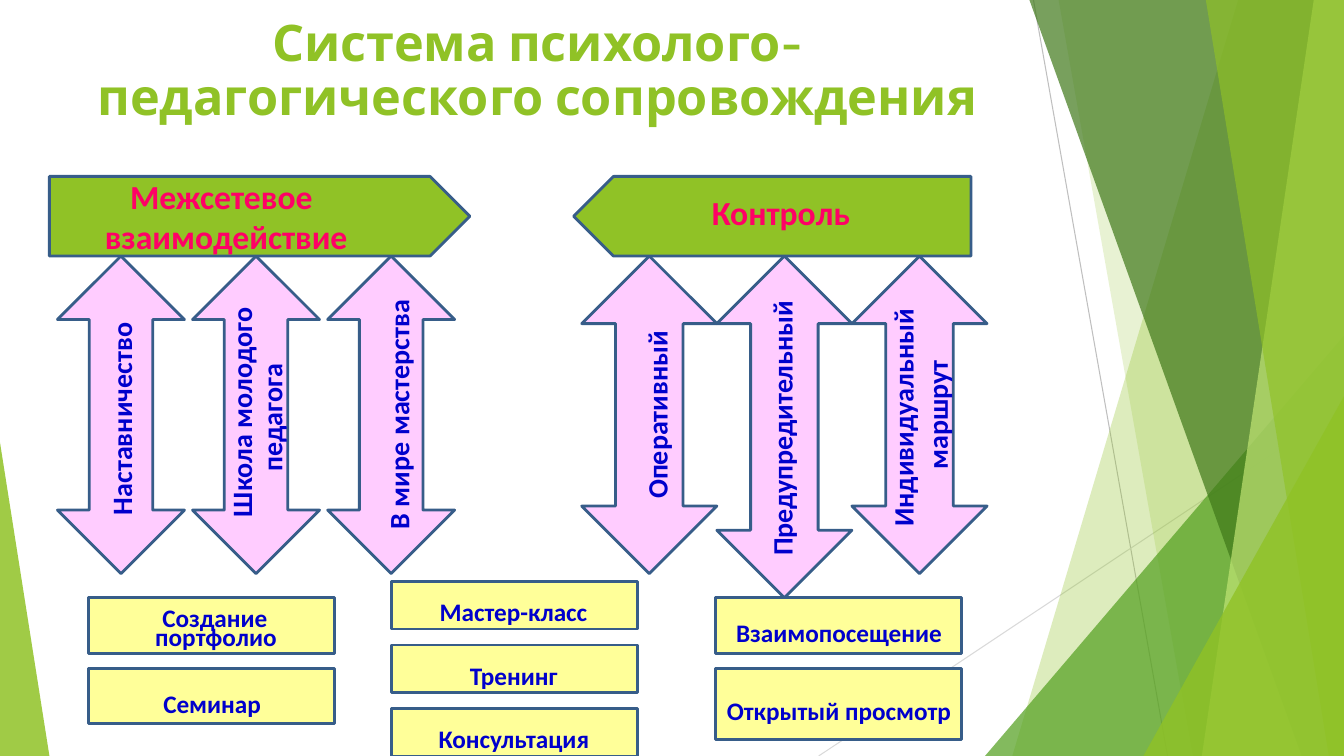
from lxml import etree
from pptx import Presentation
from pptx.dml.color import RGBColor
from pptx.enum.shapes import MSO_CONNECTOR, MSO_SHAPE
from pptx.enum.text import MSO_ANCHOR, PP_ALIGN
from pptx.oxml.ns import qn
from pptx.util import Inches, Pt

STRAIGHT = MSO_CONNECTOR.STRAIGHT
TRIANGLE, RECTANGLE = MSO_SHAPE.ISOSCELES_TRIANGLE, MSO_SHAPE.RECTANGLE
PENTAGON, DOUBLE_ARROW = MSO_SHAPE.PENTAGON, MSO_SHAPE.UP_DOWN_ARROW
TOP, LEFT, CENTER = MSO_ANCHOR.TOP, PP_ALIGN.LEFT, PP_ALIGN.CENTER

LIME = RGBColor(0x90, 0xC2, 0x26)
GREEN = RGBColor(0x54, 0xA0, 0x21)
DARK_GREEN = RGBColor(0x3F, 0x78, 0x19)
PALE_LIME = RGBColor(0xC0, 0xE4, 0x74)
GRAY = RGBColor(0xBF, 0xBF, 0xBF)
LIGHT_GRAY = RGBColor(0xD9, 0xD9, 0xD9)
OUTLINE = RGBColor(0x37, 0x5D, 0x89)
PINK = RGBColor(0xFF, 0xCC, 0xFF)
YELLOW = RGBColor(0xFF, 0xFF, 0x99)
CRIMSON = RGBColor(0xFF, 0x00, 0x66)
BLUE = RGBColor(0x00, 0x00, 0xCC)

WIDTH, HEIGHT = 13.33, 7.5


def set_fill(shape, color, opacity=100):
    shape.shadow.inherit = False
    shape.fill.solid()
    shape.fill.fore_color.rgb = color
    shape.line.fill.background()
    if opacity < 100:
        color_element = shape.fill._xPr.find(".//" + qn("a:srgbClr"))
        etree.SubElement(color_element, qn("a:alpha")).set("val", str(opacity * 1000))


def add_outlined(slide, kind, box, color):
    shape = slide.shapes.add_shape(kind, *map(Inches, box))
    set_fill(shape, color)
    shape.line.color.rgb = OUTLINE
    shape.line.width = Pt(2)
    return shape


def add_text(slide, text, box, size, color, font="Calibri", spacing=1.07,
             alignment=LEFT, margins=(0, 0)):
    text_box = slide.shapes.add_textbox(*map(Inches, box))
    frame = text_box.text_frame
    frame.word_wrap = True
    frame.vertical_anchor = TOP
    frame.margin_left = frame.margin_right = Inches(margins[0])
    frame.margin_top = frame.margin_bottom = Inches(margins[1])
    paragraph = frame.paragraphs[0]
    paragraph.text = text
    paragraph.alignment = alignment
    paragraph.line_spacing = spacing
    paragraph.font.name = font
    paragraph.font.size = Pt(size)
    paragraph.font.bold = True
    paragraph.font.color.rgb = color
    return text_box


def add_ray(slide, start, end, color):
    line = slide.shapes.add_connector(STRAIGHT, *map(Inches, start + end))
    line.line.color.rgb = color
    line.line.width = Pt(0.75)
    etree.SubElement(line._element.spPr, qn("a:effectLst"))


def add_band(slide, top_x, bottom_x, color, opacity):
    """Full-height band from a slanted left edge to the right slide edge."""
    builder = slide.shapes.build_freeform(Inches(top_x), 0)
    corners = [(WIDTH, 0), (WIDTH, HEIGHT), (bottom_x, HEIGHT)]
    builder.add_line_segments([(Inches(x), Inches(y)) for x, y in corners], close=True)
    set_fill(builder.convert_to_shape(), color, opacity)


def add_corner(slide, left, top, width, apex, color, opacity):
    """Right triangle standing on the bottom slide edge."""
    box = (left, top, width, HEIGHT - top)
    shape = slide.shapes.add_shape(TRIANGLE, *map(Inches, box))
    shape.adjustments[0] = apex
    set_fill(shape, color, opacity)


def add_backdrop(slide):
    add_ray(slide, (10.25, 0), (11.58, HEIGHT), GRAY)
    add_ray(slide, (WIDTH, 4.03), (8.12, HEIGHT), LIGHT_GRAY)
    add_band(slide, 12.28, 10.04, LIME, 30)
    add_band(slide, 10.5, 11.83, LIME, 20)
    add_corner(slide, 9.77, 3.33, 3.56, 1, GREEN, 72)
    add_band(slide, 10.21, 12.91, DARK_GREEN, 70)
    add_band(slide, 13.03, 11.92, PALE_LIME, 70)
    add_band(slide, 11.96, 13.18, LIME, 65)
    add_corner(slide, 11.34, 3.93, 1.99, 1, LIME, 80)
    add_corner(slide, 0, 4.39, 0.49, 0, LIME, 85)


def add_banner(slide, box, rotation, labels):
    """Pointed banner; labels are (text, x offset, y offset, width)."""
    left, top = box[:2]
    add_outlined(slide, PENTAGON, box, LIME).rotation = rotation
    for text, dx, dy, width in labels:
        add_text(slide, text, (left + dx, top + dy, width, 0.45), 24, CRIMSON)


def add_arrows(slide, left, top, width, pitch, arrows):
    """Row of arrows; labels are (text, x from axis, middle y, length)."""
    for index, (height, labels) in enumerate(arrows):
        arrow_left = left + index * pitch
        add_outlined(slide, DOUBLE_ARROW, (arrow_left, top, width, height), PINK)
        for text, dx, middle, length in labels:
            center_x = arrow_left + width / 2 + dx
            box = (center_x - length / 2, top + middle - 0.19, length, 0.38)
            add_text(slide, text, box, 20, BLUE).rotation = 270


def add_cards(slide, left, top, pitch, cards):
    """Column of cards; labels are (text, x offset, y offset, width)."""
    for index, (height, labels) in enumerate(cards):
        card_top = top + index * pitch
        add_outlined(slide, RECTANGLE, (left, card_top, 2.44, height), YELLOW)
        for text, dx, dy, width in labels:
            add_text(slide, text, (left + dx, card_top + dy, width, 0.34), 18, BLUE)


def main():
    presentation = Presentation()
    presentation.slide_width = Inches(WIDTH)
    presentation.slide_height = Inches(HEIGHT)
    slide = presentation.slides.add_slide(presentation.slide_layouts[6])

    add_backdrop(slide)
    add_text(slide, "Система психолого-педагогического сопровождения",
             (0.63, 0.13, 9.4, 1.44), 36, LIME, "Cabin", 0.9, CENTER, (0.1, 0.05))

    # Banners
    add_banner(slide, (0.49, 1.75, 4.17, 0.79), 0, [
        ("Межсетевое", 0.8, -0.03, 2.51), ("взаимодействие", 0.55, 0.36, 3.19)])
    add_banner(slide, (5.69, 1.75, 3.94, 0.79), 180, [("Контроль", 1.37, 0.13, 1.82)])

    # Arrows under each banner
    add_arrows(slide, 0.57, 2.54, 1.26, 1.34, [
        (3.15, [("Наставничество", 0, 1.3, 2.54)]),
        (3.15, [("Школа молодого", -0.15, 1.18, 2.82), ("педагога", 0.15, 1.43, 1.41)]),
        (3.15, [("В мире мастерства", 0.07, 1.2, 3.02)])])
    add_arrows(slide, 5.77, 2.54, 1.34, 1.34, [
        (3.15, [("Оперативный", 0.07, 1.3, 2.22)]),
        (3.39, [("Предупредительный", -0.03, 1.29, 3.37)]),
        (3.15, [("Индивидуальный", -0.17, 1.21, 2.95), ("маршрут", 0.17, 1.4, 1.44)])])

    # Columns of cards
    add_cards(slide, 0.88, 5.93, 0.7, [
        (0.55, [("Создание", 0.73, 0.02, 1.46), ("портфолио", 0.66, 0.21, 1.6)]),
        (0.55, [("Семинар", 0.74, 0.18, 1.37)])])
    add_cards(slide, 3.88, 5.77, 0.63, [
        (0.47, [("Мастер-класс", 0.48, 0.13, 1.66)]),
        (0.47, [("Тренинг", 0.78, 0.13, 1.24)]),
        (0.47, [("Консультация", 0.47, 0.13, 2.06)])])
    add_cards(slide, 7.1, 5.93, 0.7, [
        (0.55, [("Взаимопосещение", 0.2, 0.17, 2.72)]),
        (0.71, [("Открытый просмотр", 0.11, 0.25, 2.96)])])

    presentation.save("out.pptx")


if __name__ == "__main__":
    main()
